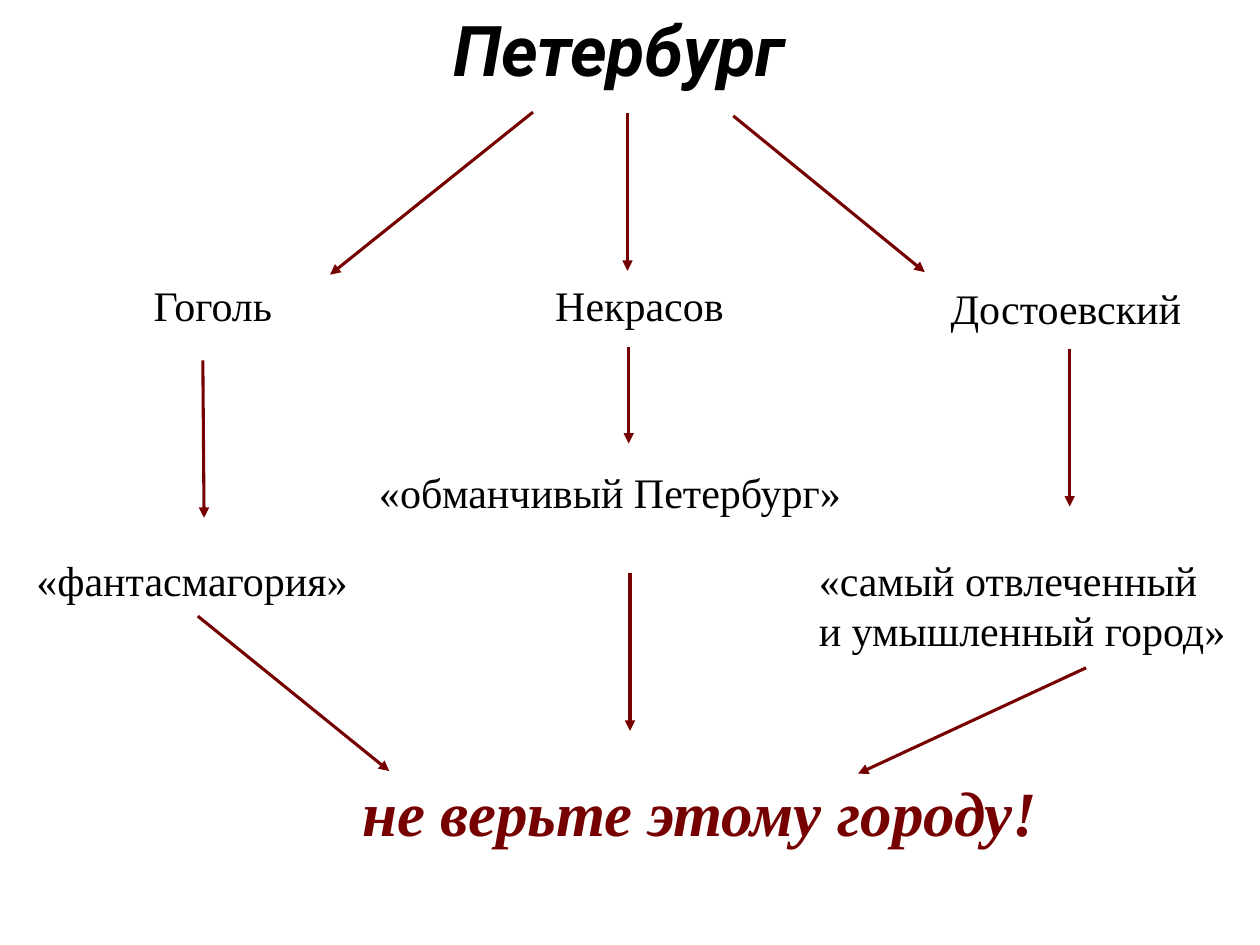
"""Build a slide on how three writers portray Petersburg."""
from dataclasses import dataclass

from lxml.etree import SubElement
from pptx import Presentation
from pptx.dml.color import RGBColor
from pptx.enum.shapes import MSO_CONNECTOR
from pptx.enum.text import MSO_ANCHOR, MSO_AUTO_SIZE, PP_ALIGN
from pptx.oxml.ns import qn
from pptx.shapes.autoshape import Shape
from pptx.slide import Slide
from pptx.util import Inches, Pt

BLACK = "000000"
MAROON = "760000"


@dataclass(frozen=True)
class Label:
    text: str
    left: float
    top: float
    width: float
    height: float = 0.5
    centered: bool = True
    size: int = 24
    font: str = "Times New Roman"
    color: str = BLACK
    emphasized: bool = False


@dataclass(frozen=True)
class Arrow:
    start: tuple[float, float]
    end: tuple[float, float]


TITLE = Label("Петербург ", 2.47, 0, 5.02, 0.77, size=40, font="Roboto", emphasized=True)
LABELS = [
    Label("Гоголь", 1.06, 2.17, 1.26),
    Label("Некрасов", 4.27, 2.17, 1.61),
    Label("Достоевский", 7.35, 2.19, 2.22),
    Label("«фантасмагория»", 0.19, 4.35, 2.71, centered=False),
    Label("«обманчивый Петербург»", 2.91, 3.65, 3.96, centered=False),
    Label("«самый отвлеченный и\u00a0умышленный город»", 6.4, 4.35, 3.6, 0.9, centered=False),
    Label("не верьте этому городу!", 1.46, 6.09, 8.19, 0.71,
          size=36, color=MAROON, emphasized=True),
]
ARROWS = [
    Arrow((4.23, 0.89), (2.62, 2.18)),
    Arrow((4.98, 0.9), (4.98, 2.15)),
    Arrow((5.82, 0.92), (7.34, 2.16)),
    Arrow((1.61, 2.86), (1.62, 4.11)),
    Arrow((4.99, 2.75), (4.99, 3.52)),
    Arrow((8.49, 2.77), (8.49, 4.02)),
    Arrow((1.57, 4.89), (3.09, 6.12)),
    Arrow((5, 4.55), (5, 5.8)),
    Arrow((8.62, 5.3), (6.81, 6.14)),
]


def rgb(color: str) -> RGBColor:
    """Return the colour for a hex string."""
    return RGBColor.from_string(color)


def write_label(shape: Shape, label: Label) -> None:
    """Place a text shape and fill it with the label's formatted text."""
    shape.left, shape.top = Inches(label.left), Inches(label.top)
    shape.width, shape.height = Inches(label.width), Inches(label.height)
    frame = shape.text_frame
    frame.word_wrap = True
    frame.auto_size = MSO_AUTO_SIZE.NONE
    frame.vertical_anchor = MSO_ANCHOR.TOP
    paragraph = frame.paragraphs[0]
    paragraph.alignment = PP_ALIGN.CENTER if label.centered else PP_ALIGN.LEFT
    run = paragraph.add_run()
    run.text = label.text
    run.font.name = label.font
    run.font.size = Pt(label.size)
    run.font.bold = run.font.italic = label.emphasized
    run.font.color.rgb = rgb(label.color)


def add_label(slide: Slide, label: Label) -> None:
    """Add a text box holding the label."""
    write_label(slide.shapes.add_textbox(0, 0, 0, 0), label)


def add_arrow(slide: Slide, arrow: Arrow) -> None:
    """Add a straight maroon connector with a triangular head at its end."""
    connector = slide.shapes.add_connector(
        MSO_CONNECTOR.STRAIGHT, *(Inches(value) for value in arrow.start + arrow.end))
    connector.line.color.rgb = rgb(MAROON)
    connector.line.width = Pt(1.75)
    properties = connector._element.spPr
    SubElement(properties.find(qn("a:ln")), qn("a:tailEnd"), type="triangle")
    SubElement(properties, qn("a:effectLst"))


def main() -> None:
    """Create and save the presentation."""
    presentation = Presentation()
    presentation.slide_width, presentation.slide_height = Inches(10), Inches(7.5)
    slide = presentation.slides.add_slide(presentation.slide_layouts.get_by_name("Title Only"))
    write_label(slide.shapes.title, TITLE)
    for label in LABELS:
        add_label(slide, label)
    for arrow in ARROWS:
        add_arrow(slide, arrow)
    presentation.save("out.pptx")


if __name__ == "__main__":
    main()
